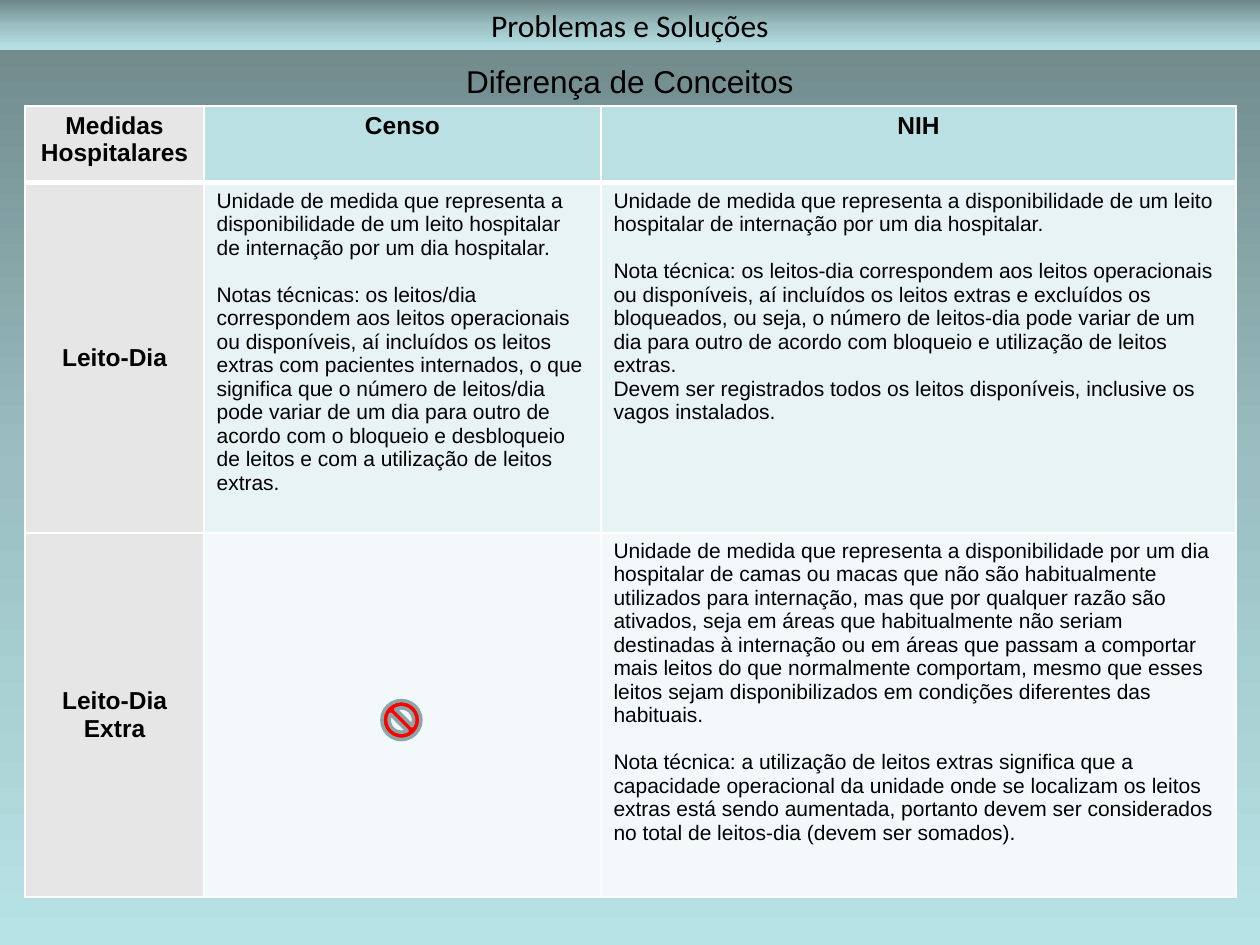
from copy import deepcopy

from pptx import Presentation
from pptx.dml.color import RGBColor
from pptx.enum.shapes import MSO_SHAPE
from pptx.enum.text import MSO_ANCHOR, MSO_AUTO_SIZE, PP_ALIGN
from pptx.oxml import parse_xml
from pptx.oxml.ns import nsdecls, qn
from pptx.util import Pt

GRADIENT = ((0, "6D8688"), (0.5, "9BBFC2"), (1, "B8E3E6"))
BODY = {"size": Pt(12), "name": "Arial", "bold": False}
HEADING = {"size": Pt(14), "name": "Arial", "bold": True}
BODY_GAP = 13.4
COL_WIDTHS = (102.2, 226.8, 362.9)
ROW_HEIGHTS = (43.9, 200.2, 208)
ROW_FILLS = ("BBE0E3", "E7F3F4", "F3F9FA")
LABEL_FILL = "E6E6E6"

LEITO = ("Unidade de medida que representa a disponibilidade de um leito hospitalar "
         "de internação por um dia hospitalar.")
CENSO_NOTA = ("Notas técnicas: os leitos/dia correspondem aos leitos operacionais ou "
              "disponíveis, aí incluídos os leitos extras com pacientes internados, o que "
              "significa que o número de leitos/dia pode variar de um dia para outro de "
              "acordo com o bloqueio e desbloqueio de leitos e com a utilização de leitos "
              "extras.")
NIH_NOTA = ("Nota técnica: os leitos-dia correspondem aos leitos operacionais ou "
            "disponíveis, aí incluídos os leitos extras e excluídos os bloqueados, ou "
            "seja, o número de leitos-dia pode variar de um dia para outro de acordo com "
            "bloqueio e utilização de leitos extras.")
NIH_REGISTRO = ("Devem ser registrados todos os leitos disponíveis, inclusive os vagos "
                "instalados.")
EXTRA = ("Unidade de medida que representa a disponibilidade por um dia hospitalar de "
         "camas ou macas que não são habitualmente utilizados para internação, mas que "
         "por qualquer razão são ativados, seja em áreas que habitualmente não seriam "
         "destinadas à internação ou em áreas que passam a comportar mais leitos do que "
         "normalmente comportam, mesmo que esses leitos sejam disponibilizados em "
         "condições diferentes das habituais.")
EXTRA_NOTA = ("Nota técnica: a utilização de leitos extras significa que a capacidade "
              "operacional da unidade onde se localizam os leitos extras está sendo "
              "aumentada, portanto devem ser considerados no total de leitos-dia (devem "
              "ser somados).")
ROWS = (
    (("Medidas", "Hospitalares"), ("Censo",), ("NIH",)),
    (("Leito-Dia",), (LEITO, CENSO_NOTA), (LEITO, NIH_NOTA, NIH_REGISTRO)),
    (("Leito-Dia Extra",), (), (EXTRA, EXTRA_NOTA)),
)


def color(value):
    """Turn a hex string into a colour."""
    return RGBColor.from_string(value)


def set_solid(fill, value):
    """Fill with one colour."""
    fill.solid()
    fill.fore_color.rgb = color(value)


def set_gradient(fill, element):
    """Fill with the vertical three-stop gradient."""
    fill.gradient()
    fill.gradient_angle = 270
    stops = next(element.iter(qn("a:gsLst")))
    stops.append(deepcopy(stops[-1]))
    for stop, (position, value) in zip(fill.gradient_stops, GRADIENT):
        stop.position = position
        stop.color.rgb = color(value)


def write(tf, texts, font, align, gap=0):
    """Write paragraphs, with a gap before the second one."""
    for i, text in enumerate(texts):
        p = tf.add_paragraph() if i else tf.paragraphs[0]
        p.alignment = align
        p.space_before = Pt(gap if i == 1 else 0)
        r = p.add_run()
        r.text = text
        r.font.color.rgb = color("000000")
        for key, value in font.items():
            setattr(r.font, key, value)


def place_heading(sp, top, text, name):
    """Place a centred heading across the slide."""
    box = {"left": 0, "top": Pt(top), "width": Pt(720), "height": Pt(28.8)}
    for key, value in box.items():
        setattr(sp, key, value)
    tf = sp.text_frame
    tf.word_wrap = True
    tf.auto_size = MSO_AUTO_SIZE.NONE
    tf.vertical_anchor = MSO_ANCHOR.MIDDLE
    write(tf, (text,), {"size": Pt(18), "name": name}, PP_ALIGN.CENTER)


def set_borders(cell, top, bottom):
    """Draw white cell borders, with top and bottom widths in points."""
    for side, width in (("L", 1), ("R", 1), ("T", top), ("B", bottom)):
        cell._tc.get_or_add_tcPr().append(parse_xml(
            f'<a:ln{side} {nsdecls("a")} w="{Pt(width)}"><a:solidFill>'
            f'<a:srgbClr val="FFFFFF"/></a:solidFill></a:ln{side}>'))


def add_concepts(s):
    """Add the table that compares the concepts."""
    tbl = s.shapes.add_table(3, 3, Pt(14.4), Pt(60.5), Pt(sum(COL_WIDTHS)),
                             Pt(sum(ROW_HEIGHTS))).table
    tbl.first_row = tbl.horz_banding = False
    for col, width in zip(tbl.columns, COL_WIDTHS):
        col.width = Pt(width)
    for i, texts in enumerate(ROWS):
        tbl.rows[i].height = Pt(ROW_HEIGHTS[i])
        for j, paragraphs in enumerate(texts):
            cell = tbl.cell(i, j)
            set_borders(cell, 3 if i == 1 else 1, 3 if i == 0 else 1)
            set_solid(cell.fill, ROW_FILLS[i] if j else LABEL_FILL)
            if i and j:
                write(cell.text_frame, paragraphs, BODY, PP_ALIGN.LEFT, BODY_GAP)
            else:
                write(cell.text_frame, paragraphs, HEADING, PP_ALIGN.CENTER)
            if i and not j:
                cell.vertical_anchor = MSO_ANCHOR.MIDDLE


def add_no_sign(s):
    """Add the sign for a concept that is not defined."""
    sp = s.shapes.add_shape(MSO_SHAPE.NO_SYMBOL, Pt(218.2), Pt(400.3), Pt(22.3), Pt(22.3))
    sp.shadow.inherit = False
    set_solid(sp.fill, "FF0000")
    sp.line.color.rgb = color("8AA6A8")
    sp.line.width = Pt(2)


def main():
    """Build and save the slide."""
    prs = Presentation()
    prs.slide_width, prs.slide_height = Pt(720), Pt(540)
    s = prs.slides.add_slide(prs.slide_layouts[5])
    set_gradient(s.background.fill, s.element)
    title = s.shapes.title
    place_heading(title, 0, "Problemas e Soluções", "Calibri")
    set_gradient(title.fill, title.element)
    subtitle = s.shapes.add_textbox(0, 0, 0, 0)
    place_heading(subtitle, 31.7, "Diferença de Conceitos", "Arial")
    add_concepts(s)
    add_no_sign(s)
    prs.save("out.pptx")


if __name__ == "__main__":
    main()
